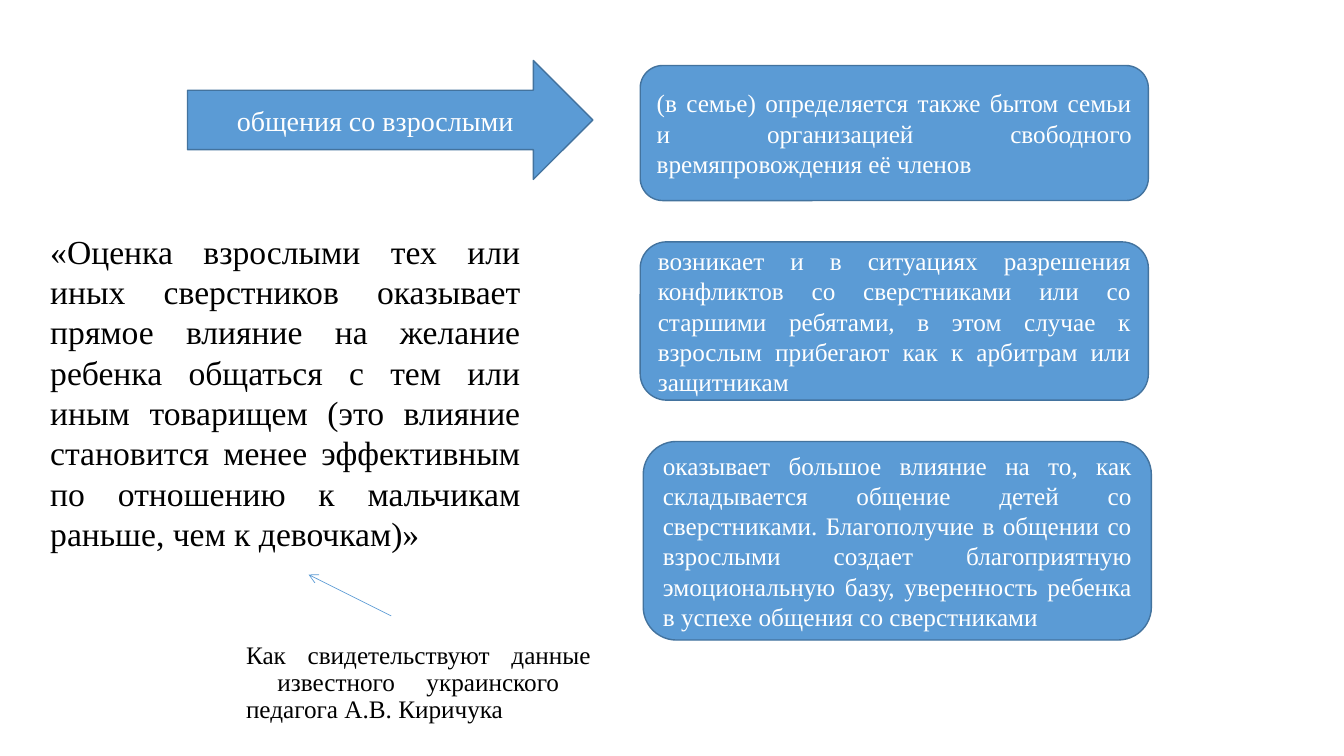
from lxml import etree
from pptx import Presentation
from pptx.dml.color import RGBColor
from pptx.enum.shapes import MSO_CONNECTOR, MSO_SHAPE
from pptx.enum.text import MSO_ANCHOR, MSO_AUTO_SIZE, PP_ALIGN
from pptx.oxml.ns import qn
from pptx.util import Inches, Pt

FONT = "Times New Roman"
BLUE = RGBColor(0x5B, 0x9B, 0xD5)
DARK_BLUE = RGBColor(0x43, 0x73, 0x9E)
WHITE = RGBColor(0xFF, 0xFF, 0xFF)
BLACK = RGBColor(0, 0, 0)
CENTER, JUSTIFY = PP_ALIGN.CENTER, PP_ALIGN.JUSTIFY
MIDDLE, TOP = MSO_ANCHOR.MIDDLE, MSO_ANCHOR.TOP
ARROW, ROUNDED = MSO_SHAPE.RIGHT_ARROW, MSO_SHAPE.ROUNDED_RECTANGLE

# Content: positions are left, top, width, height in inches
SOURCE_NOTE = "Как свидетельствуют данные\v известного украинского \vпедагога А.В. Киричука"
SOURCE_AT = (2.34, 6.27, 3.62, 1.02)
QUOTE = (
    "«Оценка взрослыми тех или иных сверстников оказывает прямое влияние на желание "
    "ребенка общаться с тем или иным товарищем (это влияние становится менее "
    "эффективным по отношению к мальчикам раньше, чем к девочкам)»"
)
QUOTE_AT = (0.4, 2.24, 4.86, 3.33)
POINTER = (3.88, 6.11, 3.06, 5.7)
BLOCKS = [
    (ARROW, (1.86, 0.6, 4.02, 1.18), 20, CENTER, "общения со взрослыми"),
    (ROUNDED, (6.35, 0.65, 5.04, 1.34), 18, JUSTIFY,
     "(в семье) определяется также бытом семьи и организацией свободного "
     "времяпровождения её членов"),
    (ROUNDED, (6.35, 2.4, 5.04, 1.57), 18, JUSTIFY,
     "возникает и в ситуациях разрешения конфликтов со сверстниками или со старшими "
     "ребятами, в этом случае к взрослым прибегают как к арбитрам или защитникам"),
    (ROUNDED, (6.38, 4.38, 5.04, 1.97), 18, JUSTIFY,
     "оказывает большое влияние на то, как складывается общение детей со сверстниками. "
     "Благополучие в общении со взрослыми создает благоприятную эмоциональную базу, "
     "уверенность ребенка в успехе общения со сверстниками"),
]


def inches(values):
    return [Inches(value) for value in values]


def write(holder, text, size, color, align, anchor):
    frame = holder.text_frame
    frame.text = text
    frame.word_wrap = True
    frame.auto_size = MSO_AUTO_SIZE.NONE
    frame.vertical_anchor = anchor
    paragraph = frame.paragraphs[0]
    paragraph.alignment = align
    paragraph.font.name = FONT
    paragraph.font.size = Pt(size)
    paragraph.font.color.rgb = color
    return paragraph


prs = Presentation()
prs.slide_width, prs.slide_height = Inches(13.33), Inches(7.5)
slide = prs.slides.add_slide(prs.slide_layouts[5])
shapes = slide.shapes

# Attribution of the quote, in the title placeholder
attribution = shapes.title
attribution.left, attribution.top, attribution.width, attribution.height = inches(SOURCE_AT)
write(attribution, SOURCE_NOTE, 18, BLACK, JUSTIFY, MIDDLE).line_spacing = 0.9

# Thin arrow from the attribution to the quote
pointer = shapes.add_connector(MSO_CONNECTOR.STRAIGHT, *inches(POINTER))
pointer.line.color.rgb = BLUE
pointer.line.width = Pt(0.5)
etree.SubElement(pointer.line._get_or_add_ln(), qn("a:tailEnd"), type="arrow")
etree.SubElement(pointer._element.spPr, qn("a:effectLst"))

# Topic arrow and its three statements
for outline, place, size, align, text in BLOCKS:
    block = shapes.add_shape(outline, *inches(place))
    block.shadow.inherit = False
    block.fill.solid()
    block.fill.fore_color.rgb = BLUE
    block.line.color.rgb = DARK_BLUE
    block.line.width = Pt(1)
    write(block, text, size, WHITE, align, MIDDLE)

# Quote
quote = shapes.add_textbox(*inches(QUOTE_AT))
write(quote, QUOTE, 24, BLACK, JUSTIFY, TOP)

prs.save("out.pptx")
